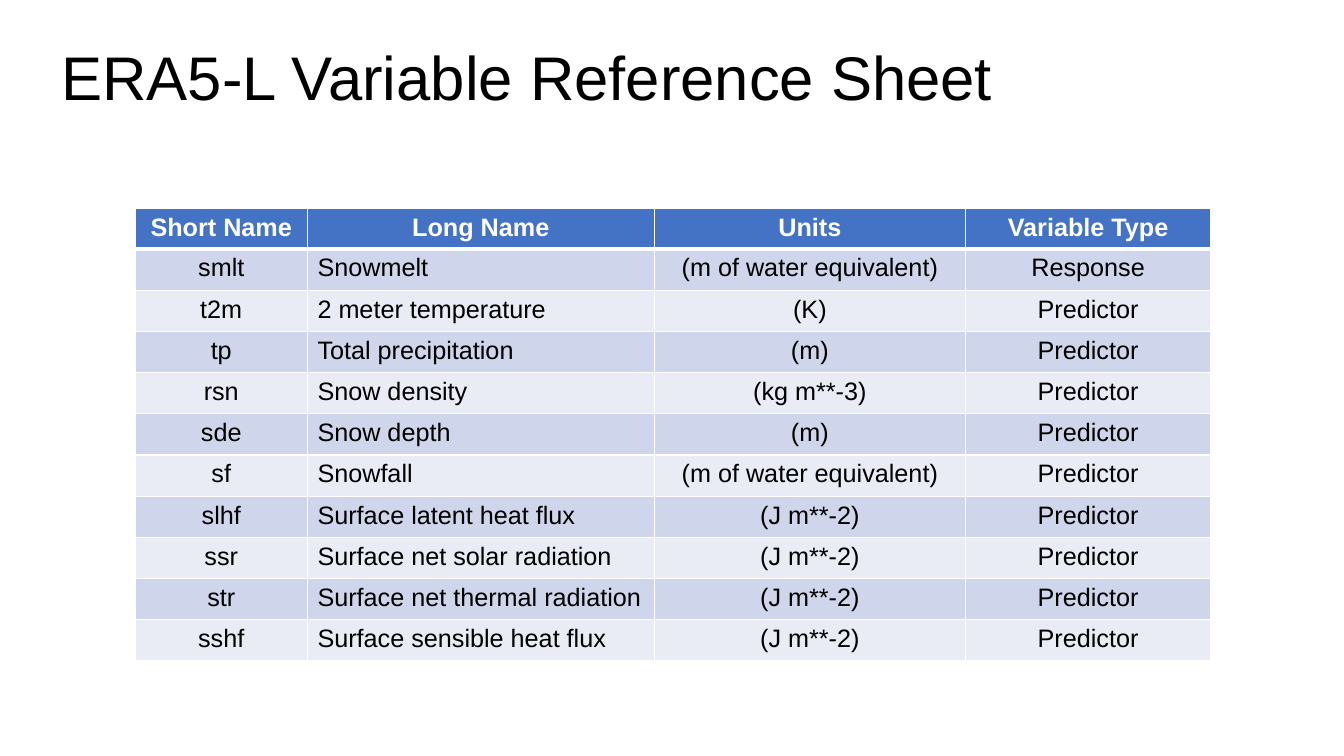
from lxml import etree
from pptx import Presentation
from pptx.dml.color import RGBColor
from pptx.enum.text import MSO_ANCHOR, PP_ALIGN
from pptx.oxml.ns import qn
from pptx.util import Pt

MIDDLE = MSO_ANCHOR.MIDDLE
LEFT, CENTER = PP_ALIGN.LEFT, PP_ALIGN.CENTER

COLORS = {
    "text": "000000",
    "header_text": "FFFFFF",
    "header": "4472C4",
    "odd_row": "CFD5EA",
    "even_row": "E9EBF5",
    "border": "FFFFFF",
}
COLUMN_WIDTHS = [123.12, 247.68, 222.48, 174.96]
HEADER_HEIGHT, ROW_HEIGHT = 26.64, 29.45
VARIABLES = [
    ("Short Name", "Long Name", "Units", "Variable Type"),
    ("smlt", "Snowmelt", "(m of water equivalent)", "Response"),
    ("t2m", "2 meter temperature", "(K)", "Predictor"),
    ("tp", "Total precipitation", "(m)", "Predictor"),
    ("rsn", "Snow density", "(kg m**-3)", "Predictor"),
    ("sde", "Snow depth", "(m)", "Predictor"),
    ("sf", "Snowfall", "(m of water equivalent)", "Predictor"),
    ("slhf", "Surface latent heat flux", "(J m**-2)", "Predictor"),
    ("ssr", "Surface net solar radiation", "(J m**-2)", "Predictor"),
    ("str", "Surface net thermal radiation", "(J m**-2)", "Predictor"),
    ("sshf", "Surface sensible heat flux", "(J m**-2)", "Predictor"),
]


def write_text(para, text, color, **formats):
    span = para.add_run()
    span.text = text
    span.font.color.rgb = RGBColor.from_string(COLORS[color])
    for name, value in {"name": "Arial", **formats}.items():
        setattr(span.font, name, value)


def add_border(cell, side, width):
    properties = cell._tc.get_or_add_tcPr()
    line = etree.SubElement(properties, qn(f"a:ln{side}"), w=str(Pt(width)))
    fill = etree.SubElement(line, qn("a:solidFill"))
    etree.SubElement(fill, qn("a:srgbClr"), val=COLORS["border"])


deck = Presentation()
deck.slide_width, deck.slide_height = Pt(960), Pt(540)
page = deck.slides.add_slide(deck.slide_layouts[6])

box = page.shapes.add_textbox(Pt(36.72), Pt(5.04), Pt(828), Pt(104.4))
box.text_frame.word_wrap = True
box.text_frame.vertical_anchor = MIDDLE
title = box.text_frame.paragraphs[0]
title.line_spacing = 0.9
write_text(title, "ERA5-L Variable Reference Sheet", "text", size=Pt(44))

table = page.shapes.add_table(
    len(VARIABLES), len(COLUMN_WIDTHS), Pt(96.48), Pt(149.04),
    Pt(sum(COLUMN_WIDTHS)), Pt(HEADER_HEIGHT + ROW_HEIGHT * (len(VARIABLES) - 1)),
).table
for column, width in zip(table.columns, COLUMN_WIDTHS):
    column.width = Pt(width)

for row_index, variable in enumerate(VARIABLES):
    is_header = row_index == 0
    table.rows[row_index].height = Pt(HEADER_HEIGHT if is_header else ROW_HEIGHT)
    row_fill = "header" if is_header else ("even_row", "odd_row")[row_index % 2]
    for column_index, text in enumerate(variable):
        cell = table.cell(row_index, column_index)
        for side in "LRTB":
            is_header_rule = (row_index, side) in ((0, "B"), (1, "T"))
            add_border(cell, side, 3 if is_header_rule else 1)
        cell.fill.solid()
        cell.fill.fore_color.rgb = RGBColor.from_string(COLORS[row_fill])
        para = cell.text_frame.paragraphs[0]
        para.alignment = LEFT if column_index == 1 and not is_header else CENTER
        color = "header_text" if is_header else "text"
        write_text(para, text, color, size=Pt(18), bold=is_header)

deck.save("out.pptx")
